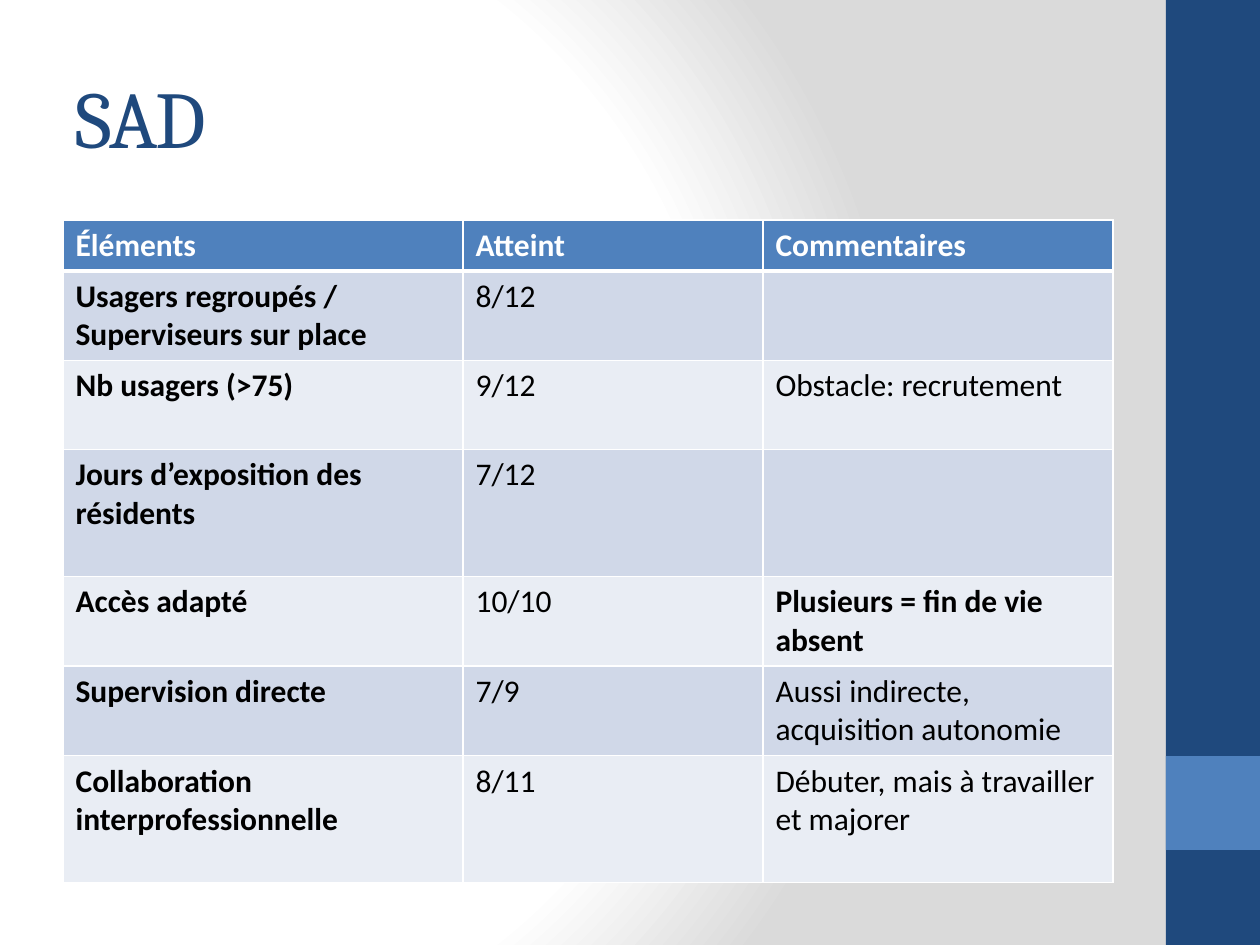
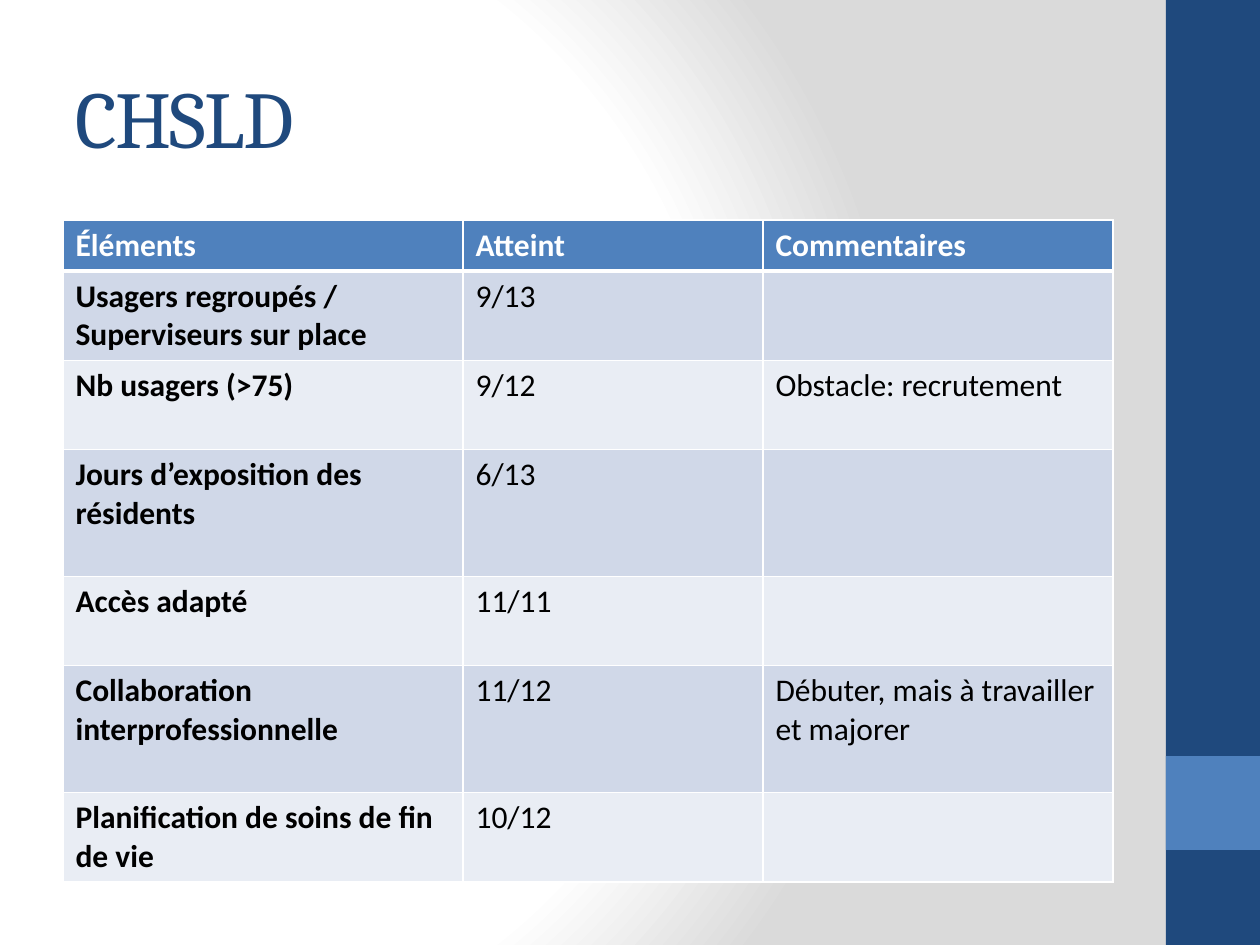
from pptx import Presentation
from pptx.dml.color import RGBColor
from pptx.enum.shapes import MSO_SHAPE as Kind
from pptx.enum.text import MSO_ANCHOR as Anchor, PP_ALIGN as Align
from pptx.oxml import parse_xml
from pptx.oxml.ns import nsdecls, qn
from pptx.util import Pt

HEAD = ["Éléments", "Atteint", "Commentaires"]
GROUP = "Usagers regroupés / Superviseurs sur place"
COUNT = "Nb usagers (>75)"
DAYS = "Jours d’exposition des résidents"
ACCESS = "Accès adapté"
TEAM = "Collaboration interprofessionnelle"
HIRE = "Obstacle: recrutement"
GROW = "Débuter, mais à travailler et majorer"
ABSENT = "Plusieurs = fin de vie absent"

SLIDES = [
    ("SAD", [
        (2, GROUP, "8/12", ""),
        (2, COUNT, "9/12", HIRE),
        (3, DAYS, "7/12", ""),
        (2, ACCESS, "10/10", ABSENT),
        (2, "Supervision directe", "7/9", "Aussi indirecte, acquisition autonomie"),
        (3, TEAM, "8/11", GROW),
    ]),
    ("CHSLD", [
        (2, GROUP, "9/13", ""),
        (2, COUNT, "9/12", HIRE),
        (3, DAYS, "6/13", ""),
        (2, ACCESS, "11/11", ""),
        (3, TEAM, "11/12", GROW),
        (2, "Planification de soins de fin de vie", "10/12", ""),
    ]),
]

NAVY = RGBColor(0x1F, 0x49, 0x7D)
BLUE = RGBColor(0x4F, 0x81, 0xBD)
WHITE = RGBColor(0xFF, 0xFF, 0xFF)
BLACK = RGBColor(0, 0, 0)
GREY = RGBColor(0xDA, 0xDA, 0xDA)
STRIPES = [RGBColor(0xD0, 0xD8, 0xE8), RGBColor(0xE9, 0xED, 0xF4)]

WIDE, HIGH = 1260, 945
LEFT, TOP = 63, 220
COLS = [400, 300, 350]
TITLE = (LEFT, 38, sum(COLS), 157)
BANDS = [(1166, 0, 94, HIGH, NAVY), (1166, 756, 94, 94, BLUE)]
PAD, LINE = 13, 38


def px(n):
    return round(n * 914400 / 126)


def write(para, text, font, size, color, bold=False):
    run = para.add_run()
    run.text = text
    run.font.name, run.font.size = font, Pt(size)
    run.font.color.rgb, run.font.bold = color, bold
    return run


def backdrop(master):
    stops = "".join(
        f'<a:gs pos="{pos}"><a:srgbClr val="{color}"/></a:gs>'
        for pos, color in [(0, WHITE), (75000, WHITE), (100000, GREY)]
    )
    back = parse_xml(
        f'<p:bg {nsdecls("p", "a")}><p:bgPr><a:gradFill rotWithShape="1">'
        f'<a:gsLst>{stops}</a:gsLst><a:path path="circle">'
        '<a:fillToRect l="20000" t="50000" r="100000" b="50000"/>'
        "</a:path></a:gradFill><a:effectLst/></p:bgPr></p:bg>"
    )
    data = master.element.cSld
    for old in data.findall(qn("p:bg")):
        data.remove(old)
    data.insert(0, back)


def add_bands(slide, master):
    tree = master.element.cSld.spTree
    for i, (*box, color) in enumerate(BANDS):
        band = slide.shapes.add_shape(Kind.RECTANGLE, *map(px, box))
        band.shadow.inherit = False
        band.fill.solid()
        band.fill.fore_color.rgb = color
        band.line.fill.background()
        band.element.nvSpPr.cNvPr.id = 20 + i
        tree.insert(2 + i, band.element)


def add_title(slide, text):
    title = slide.shapes.title
    title.left, title.top, title.width, title.height = map(px, TITLE)
    frame = title.text_frame
    frame.vertical_anchor = Anchor.MIDDLE
    para = frame.paragraphs[0]
    para.alignment = Align.LEFT
    run = write(para, text, "Cambria", 46, NAVY)
    run._r.get_or_add_rPr().set("spc", "-100")


def edge(cell, row):
    props = cell._tc.get_or_add_tcPr()
    thick = {"T": row == 1, "B": row == 0}
    for side in "LRTB":
        width = Pt(3 if thick.get(side) else 1)
        props.append(parse_xml(
            f'<a:ln{side} {nsdecls("a")} w="{width}"><a:solidFill>'
            f'<a:srgbClr val="{WHITE}"/></a:solidFill></a:ln{side}>'
        ))


def add_grid(slide, rows):
    rows = [(1, *HEAD)] + rows
    highs = [PAD + LINE * lines for lines, *_ in rows]
    box = map(px, (LEFT, TOP, sum(COLS), sum(highs)))
    grid = slide.shapes.add_table(len(rows), len(COLS), *box).table
    for col, width in zip(grid.columns, COLS):
        col.width = px(width)
    for r, (_, *texts) in enumerate(rows):
        grid.rows[r].height = px(highs[r])
        for c, text in enumerate(texts):
            cell = grid.cell(r, c)
            edge(cell, r)
            cell.fill.solid()
            cell.fill.fore_color.rgb = STRIPES[(r - 1) % 2] if r else BLUE
            para = cell.text_frame.paragraphs[0]
            para.font.size = Pt(18)
            if text:
                bold = r == 0 or c == 0 or text == ABSENT
                write(para, text, "Calibri", 18, BLACK if r else WHITE, bold)


def main():
    deck = Presentation()
    deck.slide_width, deck.slide_height = px(WIDE), px(HIGH)
    master = deck.slide_master
    backdrop(master)
    for i, (name, rows) in enumerate(SLIDES):
        slide = deck.slides.add_slide(deck.slide_layouts[5])
        if i == 0:
            add_bands(slide, master)
        add_title(slide, name)
        add_grid(slide, rows)
    deck.save("out.pptx")


if __name__ == "__main__":
    main()
